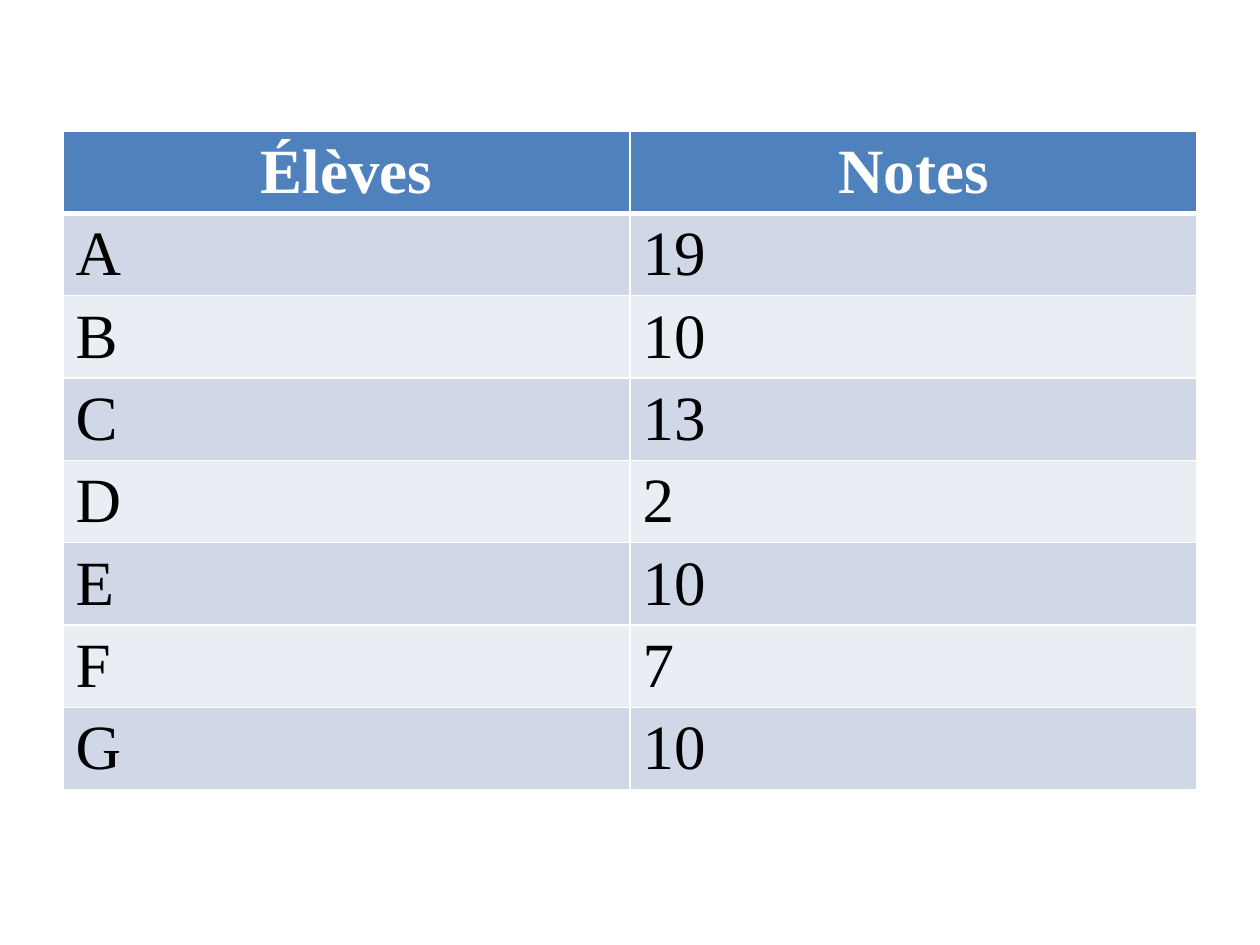
from lxml import etree
from pptx import Presentation
from pptx.dml.color import RGBColor
from pptx.enum.text import PP_ALIGN
from pptx.oxml.ns import qn
from pptx.util import Cm, Pt

CENTER = PP_ALIGN.CENTER
LEFT = PP_ALIGN.LEFT
BLANK_LAYOUT = 6
FONT_NAME = "Times New Roman"
FONT_SIZE = 36
WHITE = "FFFFFF"
BLACK = "000000"
HEADER_FILL = "4F81BD"
BAND_FILLS = ("E9EDF4", "D0D8E8")
ROW_HEIGHT = 1.66
COLUMN_WIDTH = 11.43
HEADINGS = ("Élèves", "Notes")
GRADES = (("A", 19), ("B", 10), ("C", 13), ("D", 2), ("E", 10), ("F", 7), ("G", 10))


def color(value):
    return RGBColor.from_string(value)


def set_borders(cell, top, bottom):
    properties = cell._tc.get_or_add_tcPr()
    for side, points in (("L", 1), ("R", 1), ("T", top), ("B", bottom)):
        line = etree.SubElement(properties, qn(f"a:ln{side}"), w=str(Pt(points)))
        fill = etree.SubElement(line, qn("a:solidFill"))
        etree.SubElement(fill, qn("a:srgbClr"), val=WHITE)


def format_cell(cell, text, row_index):
    is_header = row_index == 0
    set_borders(cell, 3 if row_index == 1 else 1, 3 if is_header else 1)
    cell.fill.solid()
    cell.fill.fore_color.rgb = color(HEADER_FILL if is_header else BAND_FILLS[row_index % 2])
    cell.text = str(text)
    paragraph = cell.text_frame.paragraphs[0]
    paragraph.alignment = CENTER if is_header else LEFT
    paragraph.font.name = FONT_NAME
    paragraph.font.size = Pt(FONT_SIZE)
    paragraph.font.bold = is_header
    paragraph.font.color.rgb = color(WHITE if is_header else BLACK)


def add_grade_table(slide):
    rows = (HEADINGS, *GRADES)
    shape = slide.shapes.add_table(
        len(rows), len(HEADINGS), Cm(1.27), Cm(2.64),
        Cm(COLUMN_WIDTH * len(HEADINGS)), Cm(ROW_HEIGHT * len(rows)),
    )
    for row_index, values in enumerate(rows):
        for column_index, text in enumerate(values):
            format_cell(shape.table.cell(row_index, column_index), text, row_index)


def main():
    presentation = Presentation()
    presentation.slide_width = Cm(25.4)
    presentation.slide_height = Cm(19.05)
    slide = presentation.slides.add_slide(presentation.slide_layouts[BLANK_LAYOUT])
    add_grade_table(slide)
    presentation.save("out.pptx")


if __name__ == "__main__":
    main()
